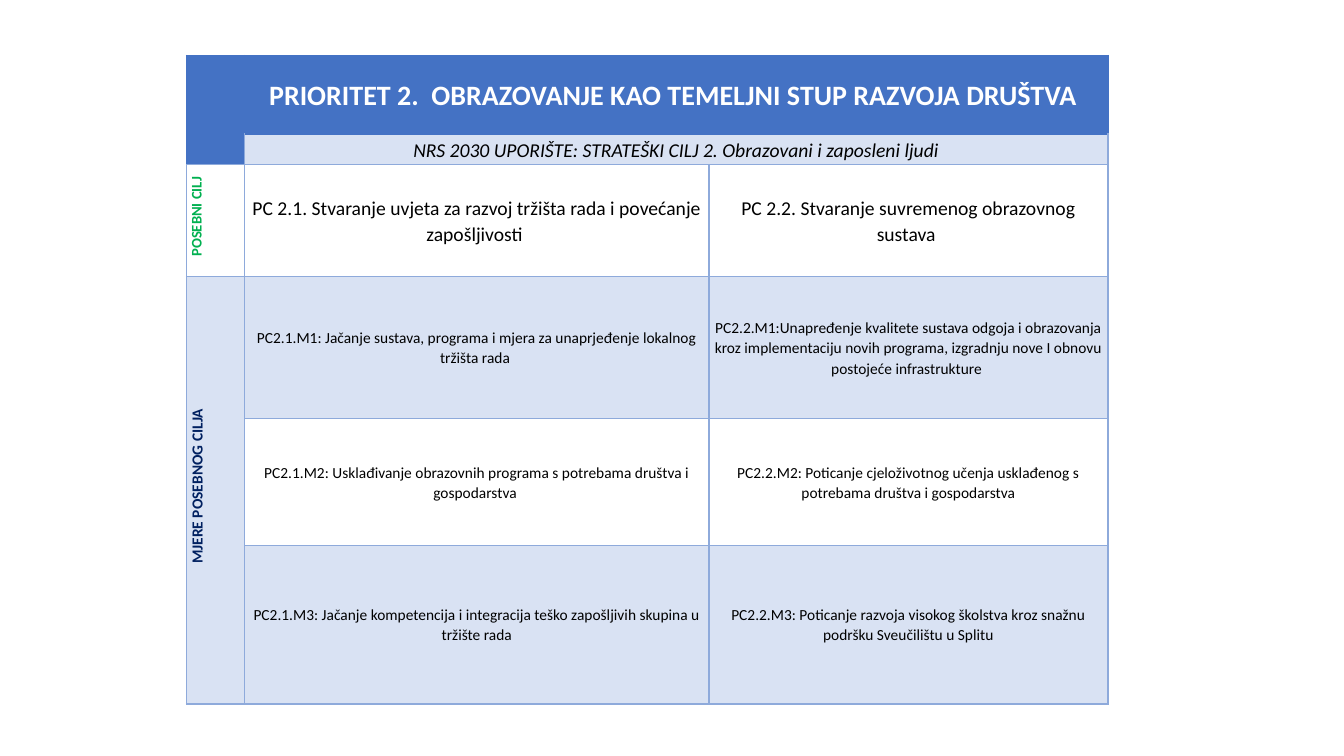
from dataclasses import dataclass

from lxml.etree import SubElement
from pptx import Presentation
from pptx.dml.color import RGBColor
from pptx.enum.text import MSO_ANCHOR, PP_ALIGN
from pptx.oxml.ns import qn
from pptx.util import Pt


@dataclass(frozen=True)
class Theme:
    font: str = "Calibri"
    banner: str = "4472C4"
    band: str = "D9E2F3"
    grid: str = "8EAADB"
    white: str = "FFFFFF"
    black: str = "000000"
    goal: str = "00B050"
    measure: str = "002060"
    banner_size: float = 20
    goal_size: float = 14
    measure_size: float = 11
    goal_label_size: float = 10.5
    line: float = 1


THEME = Theme()
COLUMN_WIDTHS = (41.6, 331.6, 285)
ROW_HEIGHTS = (56.2, 19.4, 79.9, 101.5, 90.7, 113)

PRIORITY = "PRIORITET 2.  OBRAZOVANJE KAO TEMELJNI STUP RAZVOJA DRUŠTVA "
STRATEGY = "NRS 2030 UPORIŠTE: STRATEŠKI CILJ 2. Obrazovani i zaposleni ljudi"
GOALS = (
    "PC 2.1. Stvaranje uvjeta za razvoj tržišta rada i povećanje zapošljivosti ",
    "PC 2.2. Stvaranje suvremenog obrazovnog sustava ",
)
MEASURES = (
    ("PC2.1.M1: Jačanje sustava, programa i mjera za unaprjeđenje lokalnog tržišta rada ",
     "PC2.2.M1:Unapređenje kvalitete sustava odgoja i obrazovanja kroz implementaciju "
     "novih programa, izgradnju nove I obnovu postojeće infrastrukture "),
    ("PC2.1.M2: Usklađivanje obrazovnih programa s potrebama društva i gospodarstva ",
     "PC2.2.M2: Poticanje cjeloživotnog učenja usklađenog s potrebama društva i gospodarstva"),
    ("PC2.1.M3: Jačanje kompetencija i integracija teško zapošljivih skupina u tržište rada",
     "PC2.2.M3: Poticanje razvoja visokog školstva kroz snažnu podršku Sveučilištu u Splitu"),
)


def write(cell, text, size, color=THEME.black, bold=False, italic=False):
    paragraph = cell.text_frame.paragraphs[0]
    paragraph.alignment = PP_ALIGN.CENTER
    paragraph.line_spacing = 1.07
    paragraph.space_after = Pt(8)
    run = paragraph.add_run()
    run.text = text
    run.font.name = THEME.font
    run.font.size = Pt(size)
    run.font.bold = bold
    run.font.italic = italic
    run.font.color.rgb = RGBColor.from_string(color)


def write_upward(cell, text, size, color):
    """Write a bold row label that reads from bottom to top."""
    write(cell, text, size, color, bold=True)
    cell.text_frame.paragraphs[0]._p.get_or_add_pPr().set("marL", str(Pt(5.76)))
    cell._tc.get_or_add_tcPr().set("vert", "vert270")


def draw_borders(cell, row, column):
    """Use the banner colour around the heading and the grid colour elsewhere."""
    edges = dict.fromkeys(("L", "R", "T", "B"), THEME.grid)
    if row == 0:
        edges = dict.fromkeys(edges, THEME.banner)
    elif row == 1:
        edges["T"] = THEME.banner
        if column == 0:
            edges["L"] = THEME.banner
    properties = cell._tc.get_or_add_tcPr()
    for position, (side, color) in enumerate(edges.items()):
        border = SubElement(properties, qn(f"a:ln{side}"), w=str(Pt(THEME.line)))
        fill = SubElement(border, qn("a:solidFill"))
        SubElement(fill, qn("a:srgbClr"), val=color)
        properties.insert(position, border)


def style_cell(cell, row, column):
    cell.margin_left = cell.margin_right = Pt(2.16)
    cell.margin_top = cell.margin_bottom = 0
    cell.vertical_anchor = MSO_ANCHOR.MIDDLE
    is_banner = row == 0 or (row == 1 and column == 0)
    is_band = row in (1, 3, 5) or (row > 2 and column == 0)
    if is_banner or is_band:
        cell.fill.solid()
        cell.fill.fore_color.rgb = RGBColor.from_string(
            THEME.banner if is_banner else THEME.band)
    else:
        cell.fill.background()
    draw_borders(cell, row, column)


def add_priority_table(slide, left, top):
    matrix = slide.shapes.add_table(
        len(ROW_HEIGHTS), len(COLUMN_WIDTHS), Pt(left), Pt(top),
        Pt(sum(COLUMN_WIDTHS)), Pt(sum(ROW_HEIGHTS))).table
    matrix.first_row = matrix.horz_banding = False
    for column, width in zip(matrix.columns, COLUMN_WIDTHS):
        column.width = Pt(width)
    for row, height in zip(matrix.rows, ROW_HEIGHTS):
        row.height = Pt(height)
    for row in range(len(ROW_HEIGHTS)):
        for column in range(len(COLUMN_WIDTHS)):
            style_cell(matrix.cell(row, column), row, column)

    for first, last in (((0, 0), (1, 0)), ((0, 1), (0, 2)),
                        ((1, 1), (1, 2)), ((3, 0), (5, 0))):
        matrix.cell(*first).merge(matrix.cell(*last))

    write(matrix.cell(0, 1), PRIORITY, THEME.banner_size, THEME.white, bold=True)
    write(matrix.cell(1, 1), STRATEGY, THEME.goal_size, italic=True)
    write_upward(matrix.cell(2, 0), "POSEBNI CILJ", THEME.goal_label_size, THEME.goal)
    write_upward(matrix.cell(3, 0), "MJERE POSEBNOG CILJA", THEME.measure_size, THEME.measure)
    for column, goal in enumerate(GOALS, start=1):
        write(matrix.cell(2, column), goal, THEME.goal_size)
    for row, measures in enumerate(MEASURES, start=3):
        for column, measure in enumerate(measures, start=1):
            write(matrix.cell(row, column), measure, THEME.measure_size)


def main():
    deck = Presentation()
    deck.slide_width, deck.slide_height = Pt(960), Pt(540)
    slide = deck.slides.add_slide(deck.slide_layouts[6])
    add_priority_table(slide, left=133.2, top=39.6)
    deck.save("out.pptx")


if __name__ == "__main__":
    main()
